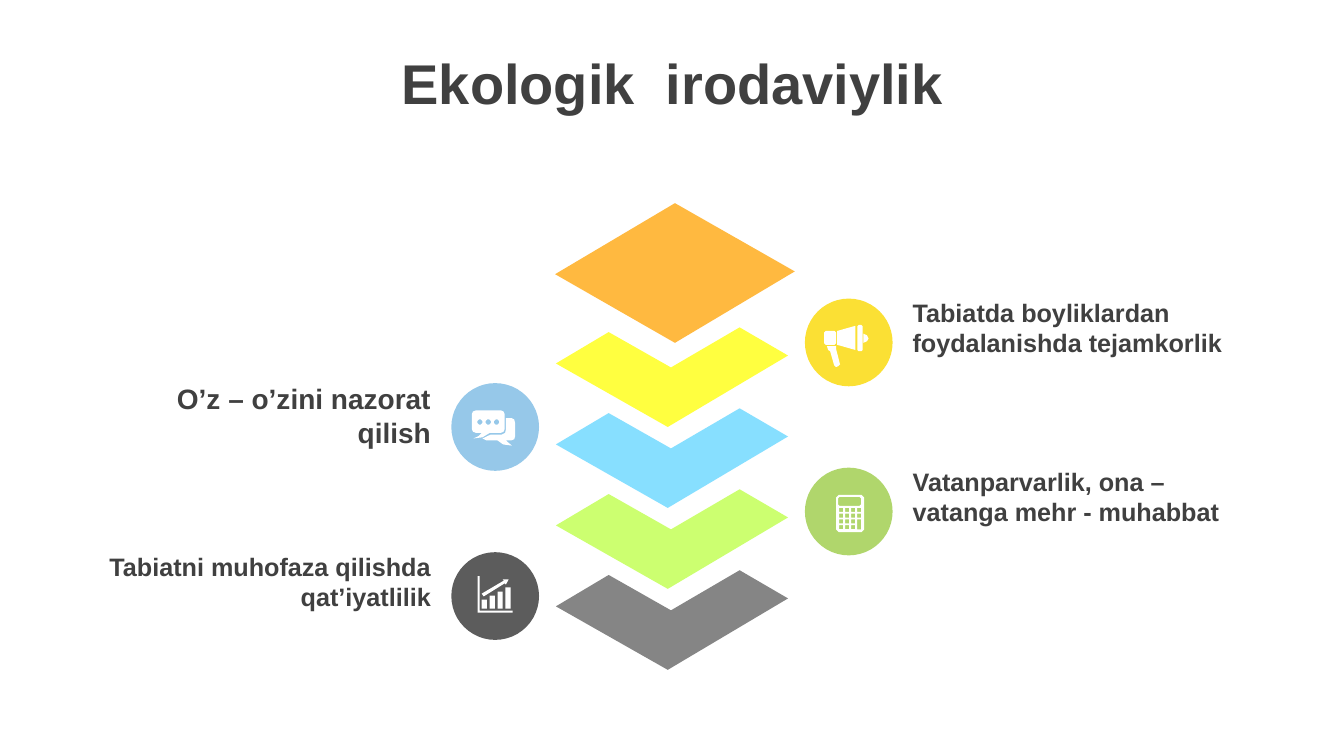
import pptx
import pptx.util
import pptx.dml.color
import pptx.enum.shapes
import pptx.enum.text

Cm = pptx.util.Cm
ALIGN = pptx.enum.text.PP_ALIGN
ANCHOR = pptx.enum.text.MSO_ANCHOR

# Content; all lengths are in centimetres
COLORS = {
    "text": "404040", "white": "FFFFFF",
    "top": "FFB940", "layer1": "FFFF40", "layer2": "87DFFF",
    "layer3": "CCFF70", "layer4": "858585",
    "yellow": "FBE034", "blue": "96C8E9", "green": "B0D66C", "gray": "5C5C5C",
}
TITLE = "Ekologik  irodaviylik"

# Side, colour, icon, text and size of each label, from top to bottom
LABELS = [
    ("right", "yellow", "megaphone", "Tabiatda boyliklardan foydalanishda tejamkorlik", 18),
    ("left", "blue", "chat", "O’z – o’zini nazorat qilish", 20),
    ("right", "green", "calculator", "Vatanparvarlik, ona – vatanga mehr - muhabbat", 18),
    ("left", "gray", "chart", "Tabiatni muhofaza qilishda qat’iyatlilik", 18),
]
SIDES = {  # circle centre, label left edge, alignment
    "left": (12.48, 2.37, ALIGN.RIGHT),
    "right": (21.39, 22.75, ALIGN.LEFT),
}
FIRST_ROW, ROW_STEP, CIRCLE = 8.63, 2.13, 2.21

DIAMOND = [(17.01, 5.12), (20.03, 6.84), (17.01, 8.64), (13.99, 6.91)]
CHEVRON = [(14.01, 9.16), (15.34, 8.37), (16.91, 9.26),
           (18.64, 8.25), (19.86, 8.96), (16.83, 10.76)]
LAYERS = ["layer1", "layer2", "layer3", "layer4"]
LAYER_STEP = 2.04


def box(x, y, w, h, cut=0):
    """Outline of a rectangle, with its corners cut if asked."""
    right, bottom = x + w, y + h
    if not cut:
        return [(x, y), (right, y), (right, bottom), (x, bottom)]
    return [(x + cut, y), (right - cut, y), (right, y + cut), (right, bottom - cut),
            (right - cut, bottom), (x + cut, bottom), (x, bottom - cut), (x, y + cut)]


# Icon outlines, measured from the circle centre; inner outlines are holes
KEYS = [(column, row) for column in range(4) for row in range(4) if (column, row) != (3, 3)]
ICONS = {
    "megaphone": [
        [(-0.55, 0.09), (-0.32, 0.09), (-0.32, 0.16), (-0.22, 0.55), (-0.27, 0.6),
         (-0.32, 0.62), (-0.37, 0.57), (-0.47, 0.22), (-0.52, 0.19)],
        [(0.37, -0.22), (0.46, -0.18), (0.5, -0.1), (0.46, -0.03), (0.37, 0.01)],
        box(-0.62, -0.29, 0.3, 0.35, 0.04),
        [(0.17, -0.42), (0.17, 0.19), (-0.29, 0.06), (-0.29, -0.29)],
        box(0.22, -0.44, 0.13, 0.66, 0.03),
    ],
    "chat": [box(-0.45 + 0.21 * i, -0.19, 0.13, 0.13, 0.04) for i in range(3)] + [
        [(0.27, -0.22), (0.42, -0.22), (0.48, -0.19), (0.5, -0.11), (0.5, 0.24),
         (0.48, 0.31), (0.4, 0.34), (0.27, 0.34), (0.42, 0.47), (0.2, 0.44),
         (0.06, 0.34), (-0.22, 0.34), (-0.32, 0.29), (-0.11, 0.19), (0.17, 0.19),
         (0.25, 0.15), (0.27, 0.06)],
        [(-0.48, -0.42), (0.14, -0.42), (0.21, -0.39), (0.24, -0.32), (0.24, 0.05),
         (0.21, 0.12), (0.14, 0.15), (-0.14, 0.15), (-0.32, 0.26), (-0.55, 0.29),
         (-0.42, 0.23), (-0.34, 0.15), (-0.48, 0.15), (-0.56, 0.12), (-0.59, 0.05),
         (-0.59, -0.32), (-0.56, -0.39)],
    ],
    "calculator": [
        box(-0.24 + 0.15 * column, -0.09 + 0.145 * row, 0.1,
            0.25 if (column, row) == (3, 2) else 0.1) for column, row in KEYS
    ] + [box(-0.27, -0.37, 0.58, 0.23, 0.04), box(-0.32, -0.42, 0.71, 0.94, 0.07)],
    "chart": [box(-0.34 + 0.2 * i, 0.32 - height, 0.13, height)
              for i, height in enumerate([0.23, 0.33, 0.43, 0.54])] + [
        [(0.19, -0.42), (0.34, -0.42), (0.27, -0.29), (0.24, -0.32),
         (-0.29, 0.01), (-0.34, -0.06), (0.22, -0.39)],
        [(-0.44, -0.5), (-0.39, -0.5), (-0.39, 0.37), (0.44, 0.37),
         (0.44, 0.42), (-0.44, 0.42)],
    ],
}

prs = pptx.Presentation()
prs.slide_width, prs.slide_height = Cm(33.87), Cm(19.05)
s = prs.slides.add_slide(prs.slide_layouts[6])


def rgb(name):
    return pptx.dml.color.RGBColor.from_string(COLORS[name])


def paint(sp, color):
    sp.shadow.inherit = False
    sp.fill.solid()
    sp.fill.fore_color.rgb = rgb(color)
    sp.line.fill.background()


def add_outlines(outlines, color, dx=0, dy=0):
    moved = [[(Cm(x + dx), Cm(y + dy)) for x, y in points] for points in outlines]
    builder = s.shapes.build_freeform(*moved[0][0])
    for i, points in enumerate(moved):
        if i:
            builder.move_to(*points[0])
        builder.add_line_segments(points[1:], close=True)
    paint(builder.convert_to_shape(), color)


def add_text(text, x, y, w, h, size=18, align=ALIGN.LEFT, anchor=ANCHOR.TOP):
    tf = s.shapes.add_textbox(Cm(x), Cm(y), Cm(w), Cm(h)).text_frame
    tf.word_wrap = True
    tf.vertical_anchor = anchor
    p = tf.paragraphs[0]
    p.alignment = align
    r = p.add_run()
    r.text = text
    r.font.name, r.font.size, r.font.bold = "Arial", pptx.util.Pt(size), True
    r.font.color.rgb = rgb("text")


# Title
add_text(TITLE, 0.86, 1.02, 32.16, 2.1, size=40, align=ALIGN.CENTER, anchor=ANCHOR.MIDDLE)

# Stack of layers
for i, color in enumerate(LAYERS):
    add_outlines([CHEVRON], color, dy=i * LAYER_STEP)
add_outlines([DIAMOND], "top")

# Circles with icons and labels
for i, (side, color, icon, text, size) in enumerate(LABELS):
    cx, label_x, align = SIDES[side]
    cy = FIRST_ROW + i * ROW_STEP
    circle = s.shapes.add_shape(pptx.enum.shapes.MSO_SHAPE.OVAL, Cm(cx - CIRCLE / 2),
                                Cm(cy - CIRCLE / 2), Cm(CIRCLE), Cm(CIRCLE))
    paint(circle, color)
    add_outlines(ICONS[icon], "white", cx, cy)
    add_text(text, label_x, cy - 1.26, 8.74, 1.8, size=size, align=align)

prs.save("out.pptx")
